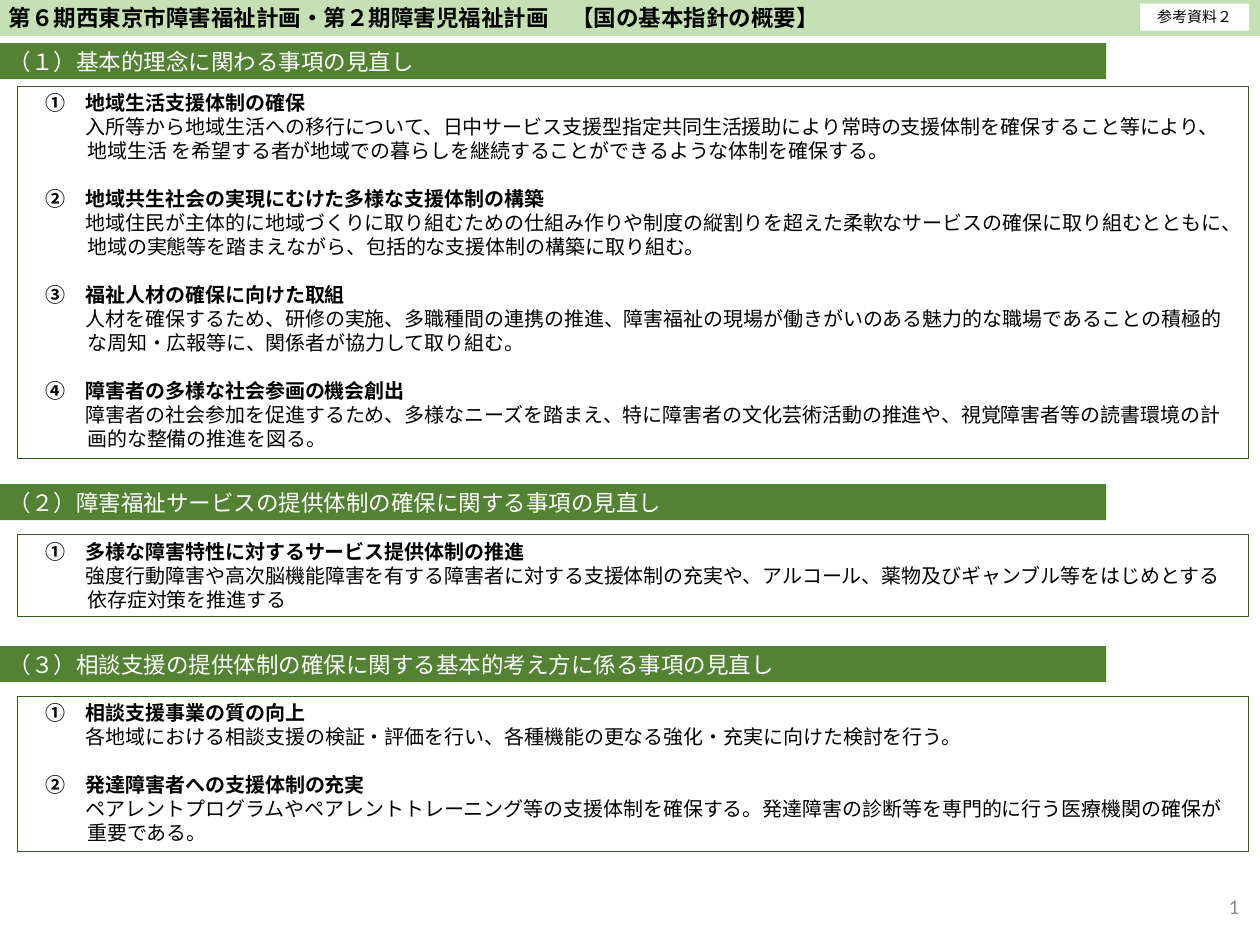
from lxml import etree
from pptx import Presentation
from pptx.dml.color import RGBColor
from pptx.enum.shapes import MSO_SHAPE
from pptx.enum.text import MSO_ANCHOR, PP_ALIGN
from pptx.oxml.ns import qn
from pptx.util import Pt

RECTANGLE = MSO_SHAPE.RECTANGLE
TOP, MIDDLE = MSO_ANCHOR.TOP, MSO_ANCHOR.MIDDLE
LEFT, CENTER, RIGHT = PP_ALIGN.LEFT, PP_ALIGN.CENTER, PP_ALIGN.RIGHT

TITLE = "第６期西東京市障害福祉計画・第２期障害児福祉計画　【国の基本指針の概要】"
LABEL = "参考資料２"
PAGE_NUMBER = "1"

SECTIONS = [
    {
        "heading": "（１）基本的理念に関わる事項の見直し",
        "bar_top": 34.6, "box_top": 69.1, "box_height": 298,
        "items": [
            ("①　地域生活支援体制の確保",
             "入所等から地域生活への移行について、日中サービス支援型指定共同生活援助により常時の支援体制を確保すること等により、"
             "地域生活 を希望する者が地域での暮らしを継続することができるような体制を確保する。"),
            ("②　地域共生社会の実現にむけた多様な支援体制の構築",
             "地域住民が主体的に地域づくりに取り組むための仕組み作りや制度の縦割りを超えた柔軟なサービスの確保に取り組むとともに、"
             "地域の実態等を踏まえながら、包括的な支援体制の構築に取り組む。"),
            ("③　福祉人材の確保に向けた取組",
             "人材を確保するため、研修の実施、多職種間の連携の推進、障害福祉の現場が働きがいのある魅力的な職場であることの積極的"
             "な周知・広報等に、関係者が協力して取り組む。"),
            ("④　障害者の多様な社会参画の機会創出",
             "障害者の社会参加を促進するため、多様なニーズを踏まえ、特に障害者の文化芸術活動の推進や、視覚障害者等の読書環境の計"
             "画的な整備の推進を図る。"),
        ],
    },
    {
        "heading": "（２）障害福祉サービスの提供体制の確保に関する事項の見直し",
        "bar_top": 387.4, "box_top": 427.7, "box_height": 65.5,
        "items": [
            ("①　多様な障害特性に対するサービス提供体制の推進",
             "強度行動障害や高次脳機能障害を有する障害者に対する支援体制の充実や、アルコール、薬物及びギャンブル等をはじめとする"
             "依存症対策を推進する"),
        ],
    },
    {
        "heading": "（３）相談支援の提供体制の確保に関する基本的考え方に係る事項の見直し",
        "bar_top": 517, "box_top": 557.3, "box_height": 124,
        "items": [
            ("①　相談支援事業の質の向上",
             "各地域における相談支援の検証・評価を行い、各種機能の更なる強化・充実に向けた検討を行う。"),
            ("②　発達障害者への支援体制の充実",
             "ペアレントプログラムやペアレントトレーニング等の支援体制を確保する。発達障害の診断等を専門的に行う医療機関の確保が"
             "重要である。"),
        ],
    },
]

THEME = {
    "font": "Noto Sans CJK JP", "number_font": "Calibri",
    "title": 18, "body": 16, "label": 12, "number": 16.8,
    "black": "000000", "white": "FFFFFF", "gray": "8C8C8C",
    "pale_green": "C5E0B4", "green": "548235", "dark_green": "385723",
}
PAGE_WIDTH, PAGE_HEIGHT = 1008, 756
BAR_WIDTH, BAR_HEIGHT = 885, 28.8
BOX_LEFT, BOX_WIDTH = 13.7, 985
LINE_RATIO = 1.2
TEXT_INDENT, NUMBER_INDENT, FIRST_LINE_INDENT = 49, -33, -1


def color(name):
    return RGBColor.from_string(THEME[name])


def add_box(page, place, fill=None, line=None, anchor=TOP):
    box = page.shapes.add_shape(RECTANGLE, *map(Pt, place))
    box.shadow.inherit = False
    for part, name in ((box.fill, fill), (box.line.fill, line)):
        if name:
            part.solid()
            part.fore_color.rgb = color(name)
        else:
            part.background()
    if line:
        box.line.width = Pt(0.75)
    box.text_frame.word_wrap = True
    box.text_frame.vertical_anchor = anchor
    return box


def write(para, text, size="body", ink="black", bold=False, font="font",
          align=LEFT, before=0, indent=None):
    spacing = {
        "alignment": align,
        "line_spacing": Pt(THEME[size] * LINE_RATIO),
        "space_before": Pt(before),
    }
    for name, value in spacing.items():
        setattr(para, name, value)
    if indent is not None:
        properties = para._p.get_or_add_pPr()
        properties.set("marL", str(Pt(TEXT_INDENT)))
        properties.set("indent", str(Pt(indent)))
    span = para.add_run()
    span.text = text
    for name, value in {"name": THEME[font], "size": Pt(THEME[size]), "bold": bold}.items():
        setattr(span.font, name, value)
    span.font.color.rgb = color(ink)
    east_asian = etree.SubElement(span.font._element, qn("a:ea"))
    east_asian.set("typeface", THEME[font])


def add_label(page, place, text, fill=None, anchor=TOP, **style):
    box = add_box(page, place, fill, anchor=anchor)
    write(box.text_frame.paragraphs[0], text, **style)


def add_section(page, section):
    add_label(page, (0, section["bar_top"], BAR_WIDTH, BAR_HEIGHT), section["heading"],
              "green", size="title", ink="white")
    place = (BOX_LEFT, section["box_top"], BOX_WIDTH, section["box_height"])
    frame = add_box(page, place, line="dark_green").text_frame
    for index, (heading, body) in enumerate(section["items"]):
        para = frame.add_paragraph() if index else frame.paragraphs[0]
        gap = THEME["body"] * LINE_RATIO if index else 0
        write(para, heading, bold=True, before=gap, indent=NUMBER_INDENT)
        write(frame.add_paragraph(), body, indent=FIRST_LINE_INDENT)


def main():
    """Build the one-page summary of the national basic guidelines."""
    deck = Presentation()
    deck.slide_width, deck.slide_height = Pt(PAGE_WIDTH), Pt(PAGE_HEIGHT)
    page = deck.slides.add_slide(deck.slide_layouts[6])
    add_label(page, (0, 0, PAGE_WIDTH, BAR_HEIGHT), TITLE, "pale_green", size="title", bold=True)
    add_label(page, (912.2, 2.9, 87.1, 21.6), LABEL, "white", size="label", align=CENTER)
    for section in SECTIONS:
        add_section(page, section)
    add_label(page, (771.8, 704.9, 226.8, 40.3), PAGE_NUMBER, anchor=MIDDLE,
              size="number", ink="gray", font="number_font", align=RIGHT)
    deck.save("out.pptx")


if __name__ == "__main__":
    main()
